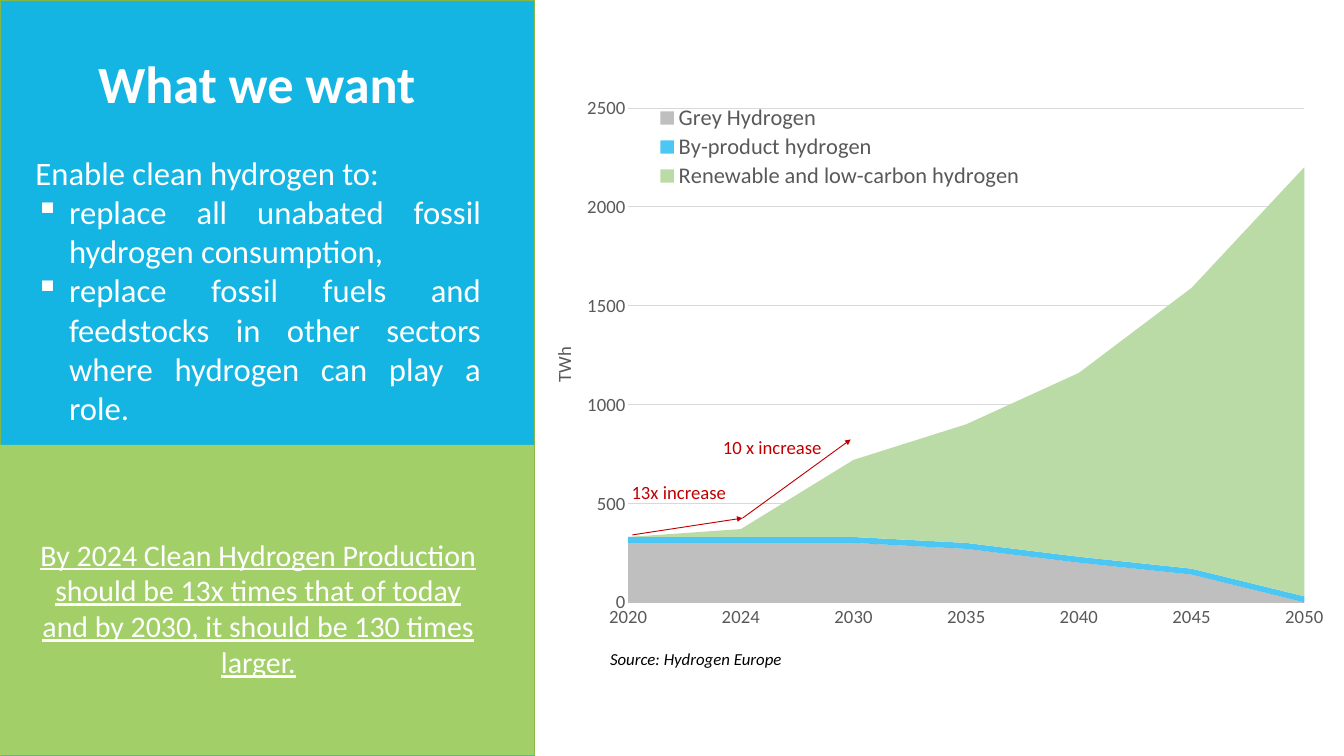
from lxml import etree
from pptx import Presentation
from pptx.chart.data import CategoryChartData
from pptx.dml.color import RGBColor
from pptx.enum.chart import XL_CHART_TYPE, XL_LEGEND_POSITION, XL_TICK_MARK
from pptx.enum.shapes import MSO_CONNECTOR, MSO_SHAPE
from pptx.enum.text import MSO_ANCHOR, MSO_AUTO_SIZE, PP_ALIGN
from pptx.oxml.ns import qn
from pptx.util import Inches, Pt

AREA_STACKED = XL_CHART_TYPE.AREA_STACKED
LEGEND_BOTTOM = XL_LEGEND_POSITION.BOTTOM
NO_TICKS = XL_TICK_MARK.NONE
RECTANGLE = MSO_SHAPE.RECTANGLE
STRAIGHT = MSO_CONNECTOR.STRAIGHT
TOP = MSO_ANCHOR.TOP
NO_AUTOFIT = MSO_AUTO_SIZE.NONE
LEFT, CENTER, JUSTIFY = PP_ALIGN.LEFT, PP_ALIGN.CENTER, PP_ALIGN.JUSTIFY

FONT = "Calibri"
WHITE, BLACK, GREY, RED = "FFFFFF", "000000", "595959", "C00000"
BLUE, GREEN, GREEN_LINE = "14B5E3", "A3CF68", "82B845"

GOALS = [
    "replace all unabated fossil hydrogen consumption, ",
    "replace fossil fuels and feedstocks in other sectors where hydrogen can play a role.",
]
TARGET = ("By 2024 Clean Hydrogen Production should be 13x times that of today "
          "and by 2030, it should be 130 times larger.")
YEARS = ["2020", "2024", "2030", "2035", "2040", "2045", "2050"]
SERIES = [
    ("Grey Hydrogen", "BFBFBF", [300, 300, 300, 270, 200, 140, 0]),
    ("By-product hydrogen", "00B0F0", [30] * 7),
    ("Renewable and low-carbon hydrogen", "BADBA5", [0, 40, 390, 600, 930, 1420, 2170]),
]


def rgb(color):
    return RGBColor.from_string(color)


def format_font(font, size, color, **values):
    font.color.rgb = rgb(color)
    for name, value in {"name": FONT, "size": Pt(size), **values}.items():
        setattr(font, name, value)


def format_line(line, color, width=0.75):
    line.color.rgb = rgb(color)
    line.width = Pt(width)


def add_panel(slide, top, height, fill, line=None):
    panel = slide.shapes.add_shape(RECTANGLE, 0, Inches(top), Inches(7.95), Inches(height))
    panel.shadow.inherit = False
    panel.fill.solid()
    panel.fill.fore_color.rgb = rgb(fill)
    if line:
        format_line(panel.line, line)
    else:
        panel.line.fill.background()


def add_title(slide, text):
    title = slide.shapes.title
    slide.shapes._spTree.append(title._element)  # bring in front of the panel
    title.left, title.top, title.width, title.height = map(Inches, (1.46, 0.61, 5.04, 1.03))
    frame = title.text_frame
    frame.text = text
    settings = {"margin_left": 0, "margin_top": 0, "margin_right": 0, "margin_bottom": 0,
                "vertical_anchor": TOP, "auto_size": NO_AUTOFIT, "word_wrap": True}
    for name, value in settings.items():
        setattr(frame, name, value)
    paragraph = frame.paragraphs[0]
    paragraph.alignment = LEFT
    paragraph.line_spacing = Pt(78.4)
    format_font(paragraph.font, 56, WHITE, bold=True)


def add_text_box(slide, left, top, width, height):
    box = slide.shapes.add_textbox(*map(Inches, (left, top, width, height)))
    box.text_frame.word_wrap = True
    return box.text_frame


def add_label(slide, text, left, top, width, height, size=20, color=RED, **values):
    paragraph = add_text_box(slide, left, top, width, height).paragraphs[0]
    paragraph.text = text
    format_font(paragraph.font, size, color, **values)


def add_bullet(paragraph):
    properties = paragraph._p.get_or_add_pPr()
    properties.set("marL", str(Inches(0.5)))
    properties.set("indent", str(-Inches(0.5)))
    etree.SubElement(properties, qn("a:buChar"), char="▪")


def add_message(slide):
    frame = add_text_box(slide, 0.43, 2.22, 6.83, 7.99)
    intro = frame.paragraphs[0]
    intro.text = "Enable clean hydrogen to: "
    intro.alignment = JUSTIFY
    format_font(intro.font, 35, WHITE)
    for goal in GOALS:
        paragraph = frame.add_paragraph()
        paragraph.text = goal
        paragraph.alignment = JUSTIFY
        add_bullet(paragraph)
        format_font(paragraph.font, 35, WHITE)
    target = frame.add_paragraph()
    target.text = TARGET
    target.alignment = CENTER
    target.space_before = Pt(117)
    format_font(target.font, 32, WHITE, underline=True)


def set_layout(element, index, inner=False, **fractions):
    """Place a chart part by fractions of the chart's size."""
    for old in element.findall(qn("c:layout")):
        element.remove(old)
    layout = etree.Element(qn("c:layout"))
    manual = etree.SubElement(layout, qn("c:manualLayout"))
    if inner:
        etree.SubElement(manual, qn("c:layoutTarget"), val="inner")
    for mode in ("xMode", "yMode"):
        etree.SubElement(manual, qn(f"c:{mode}"), val="edge")
    for name, value in fractions.items():
        etree.SubElement(manual, qn(f"c:{name}"), val=str(value))
    element.insert(index, layout)


def format_axes(chart):
    categories, values = chart.category_axis, chart.value_axis
    for axis in (categories, values):
        axis.major_tick_mark = axis.minor_tick_mark = NO_TICKS
        format_font(axis.tick_labels.font, 20, GREY)
    categories.has_major_gridlines = False
    format_line(categories.format.line, "BFBFBF")
    values.minimum_scale, values.maximum_scale, values.major_unit = 0, 2500, 500
    values.tick_labels.number_format = "0"
    values.tick_labels.number_format_is_linked = False
    values.format.line.fill.background()
    format_line(values.major_gridlines.format.line, "D9D9D9")
    values._element.find(qn("c:crossBetween")).set("val", "midCat")
    title = values.axis_title
    title.text_frame.text = "TWh"
    title.text_frame._txBody.bodyPr.set("rot", "-5400000")
    format_font(title.text_frame.paragraphs[0].font, 20, GREY, bold=False)
    set_layout(title._element, 1, x=0.036, y=0.467)


def add_hydrogen_chart(slide):
    data = CategoryChartData()
    data.categories = YEARS
    for name, _, values in SERIES:
        data.add_series(name, values)
    place = map(Inches, (7.7, 1, 12.3, 8.8))
    chart = slide.shapes.add_chart(AREA_STACKED, *place, data).chart
    chart.has_title = False
    format_font(chart.font, 14, BLACK)
    format_axes(chart)
    for series, (_, color, _) in zip(chart.plots[0].series, SERIES):
        series.format.fill.solid()
        series.format.fill.fore_color.rgb = rgb(color)
        series.format.line.fill.background()
    byproduct = chart.plots[0].series[1]._element
    color_element = byproduct.find(qn("c:spPr")).find(".//" + qn("a:srgbClr"))
    etree.SubElement(color_element, qn("a:alpha"), val="70000")
    chart.has_legend = True
    chart.legend.position = LEGEND_BOTTOM
    chart.legend.include_in_layout = False
    format_font(chart.legend.font, 24, GREY)
    set_layout(chart.legend._element, 1, x=0.16, y=0.06, w=0.46, h=0.15)
    plot_area = chart._chartSpace.chart.plotArea
    set_layout(plot_area, 0, inner=True, x=0.134, y=0.069, w=0.818, h=0.836)


def add_arrow(slide, start, end):
    arrow = slide.shapes.add_connector(STRAIGHT, *map(Inches, (*start, *end)))
    format_line(arrow.line, RED, 1)
    etree.SubElement(arrow.line._get_or_add_ln(), qn("a:tailEnd"), type="triangle")
    etree.SubElement(arrow._element.spPr, qn("a:effectLst"))


def main():
    presentation = Presentation()
    presentation.slide_width, presentation.slide_height = Inches(20), Inches(11.25)
    slide = presentation.slides.add_slide(presentation.slide_layouts[5])
    add_panel(slide, 0, 11.25, BLUE, GREEN_LINE)
    add_title(slide, "What we want")
    add_panel(slide, 6.62, 4.62, GREEN)
    add_message(slide)
    add_hydrogen_chart(slide)
    growth = [(9.41, 7.96), (11.05, 7.71), (12.66, 6.54)]
    for start, end in zip(growth, growth[1:]):
        add_arrow(slide, start, end)
    add_label(slide, "13x increase", 9.3, 7.11, 1.63, 0.44)
    add_label(slide, "10 x increase", 10.66, 6.44, 2, 0.44)
    add_label(slide, "Source: Hydrogen Europe", 8.98, 9.6, 4.14, 0.4, 18, BLACK, italic=True)
    presentation.save("out.pptx")


if __name__ == "__main__":
    main()
